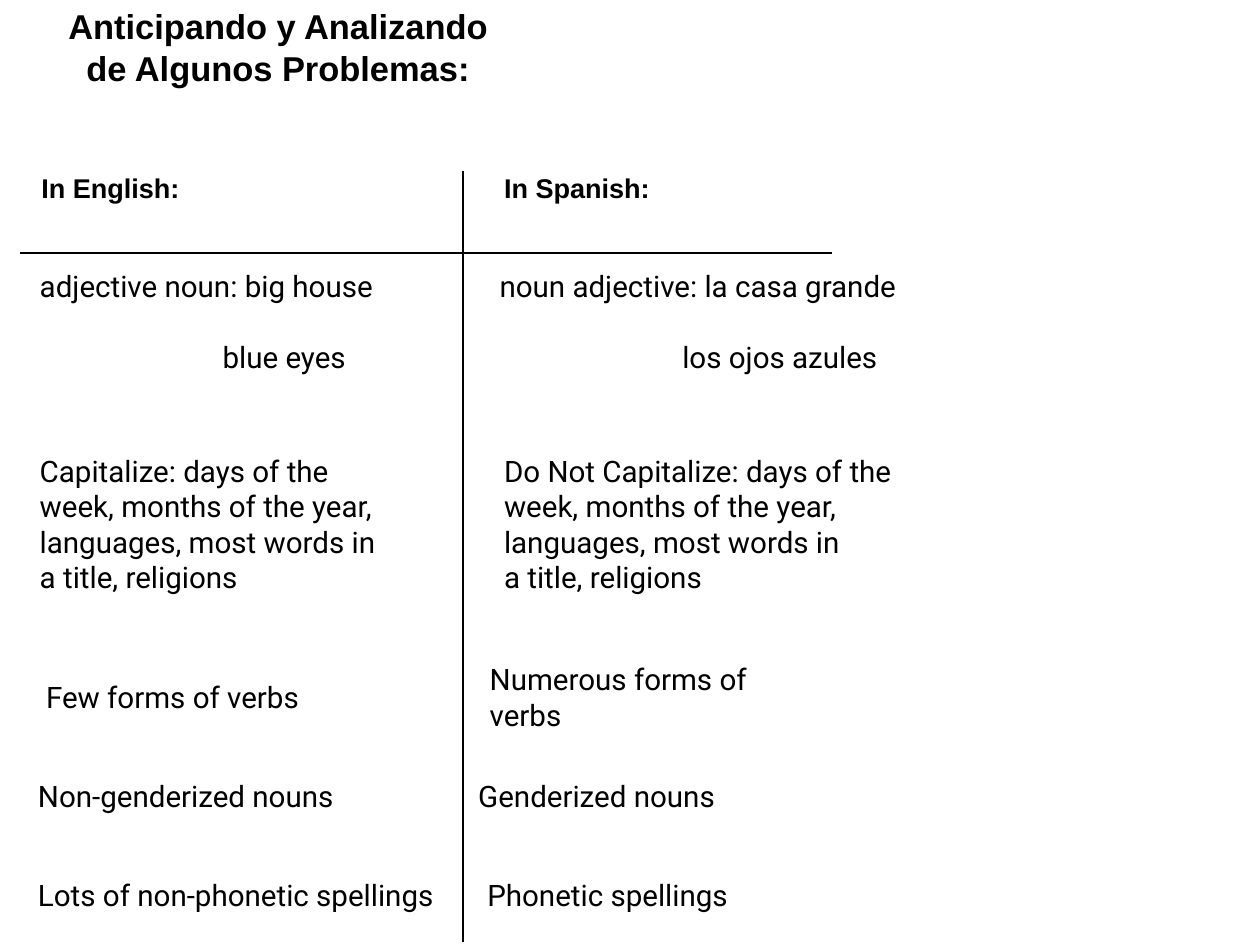
"""Builds a slide comparing English and Spanish grammar in two columns."""
from lxml import etree
from pptx import Presentation
from pptx.dml.color import RGBColor
from pptx.enum.shapes import MSO_CONNECTOR
from pptx.enum.text import MSO_ANCHOR, MSO_AUTO_SIZE, PP_ALIGN
from pptx.oxml.ns import qn
from pptx.util import Cm, Pt

STRAIGHT = MSO_CONNECTOR.STRAIGHT
MIDDLE = MSO_ANCHOR.MIDDLE
GROW = MSO_AUTO_SIZE.SHAPE_TO_FIT_TEXT
LEFT, CENTER = PP_ALIGN.LEFT, PP_ALIGN.CENTER

TITLE = {"name": "Arial", "size": Pt(28), "bold": True}
HEADING = {"name": "Arial", "size": Pt(22), "bold": True}
BODY = {"name": "Roboto", "size": Pt(24), "bold": False}
FRAME = {"margin_left": Cm(0.15), "margin_right": Cm(0.15),
         "margin_top": Cm(0.15), "margin_bottom": Cm(0.15),
         "vertical_anchor": MIDDLE, "word_wrap": False, "auto_size": GROW}


def color(code):
    return RGBColor.from_string(code)


def add_text(left, top, width, height, lines, style, align=LEFT):
    box = page.shapes.add_textbox(Cm(left), Cm(top), Cm(width), Cm(height))
    frame = box.text_frame
    for name, value in FRAME.items():
        setattr(frame, name, value)
    for index, line in enumerate(lines):
        para = frame.paragraphs[0] if index == 0 else frame.add_paragraph()
        para.alignment = align
        span = para.add_run()
        span.text = line
        for name, value in style.items():
            setattr(span.font, name, value)
        span.font.color.rgb = color("000000")
    return frame


deck = Presentation()
deck.slide_width, deck.slide_height = Cm(36.12), Cm(27.1)
page = deck.slides.add_slide(deck.slide_layouts[6])

add_text(1.8, 0, 12.34, 2.69,
         ["Anticipando y Analizando", "de Algunos Problemas:"], TITLE, CENTER)

for x1, y1, x2, y2 in [(0.58, 7.26, 23.85, 7.26), (13.28, 27, 13.28, 4.9)]:
    rule = page.shapes.add_connector(STRAIGHT, Cm(x1), Cm(y1), Cm(x2), Cm(y2))
    rule.line.color.rgb = color("000000")
    rule.line.width = Pt(2)
    etree.SubElement(rule._element.spPr, qn("a:effectLst"))

for left, width, heading in [(1.04, 4.5, "In English:"),
                             (14.3, 4.72, "In Spanish:")]:
    add_text(left, 4.78, width, 1.19, [heading], HEADING)

word_order = [(0.99, 10.03, ["adjective noun: big house", "blue eyes"]),
              (14.17, 11.86, ["noun adjective: la casa grande", "los ojos azules"])]
for left, width, examples in word_order:
    frame = add_text(left, 7.54, width, 3.33, examples, BODY)
    second = frame.paragraphs[1]
    second.space_before = Pt(28.8)
    second._p.get_or_add_pPr().set("marL", str(Cm(5.24)))

capital_words = ["week, months of the year,", "languages, most words in",
                 "a title, religions"]
for left, width, opening in [(0.99, 10.03, "Capitalize: days of the"),
                             (14.3, 11.63, "Do Not Capitalize: days of the")]:
    add_text(left, 12.85, width, 4.34, [opening] + capital_words, BODY)

contrasts = [
    (19.35, (1.17, 7.59, "Few forms of verbs"),
     (13.89, 9.91, "Numerous forms of verbs")),
    (22.17, (0.94, 8.97, "Non-genderized nouns"),
     (13.56, 7.24, "Genderized nouns")),
    (25.02, (0.94, 11.79, "Lots of non-phonetic spellings"),
     (13.82, 7.21, "Phonetic spellings")),
]
for top, *columns in contrasts:
    for left, width, trait in columns:
        add_text(left, top, width, 1.27, [trait], BODY)

deck.save("out.pptx")
